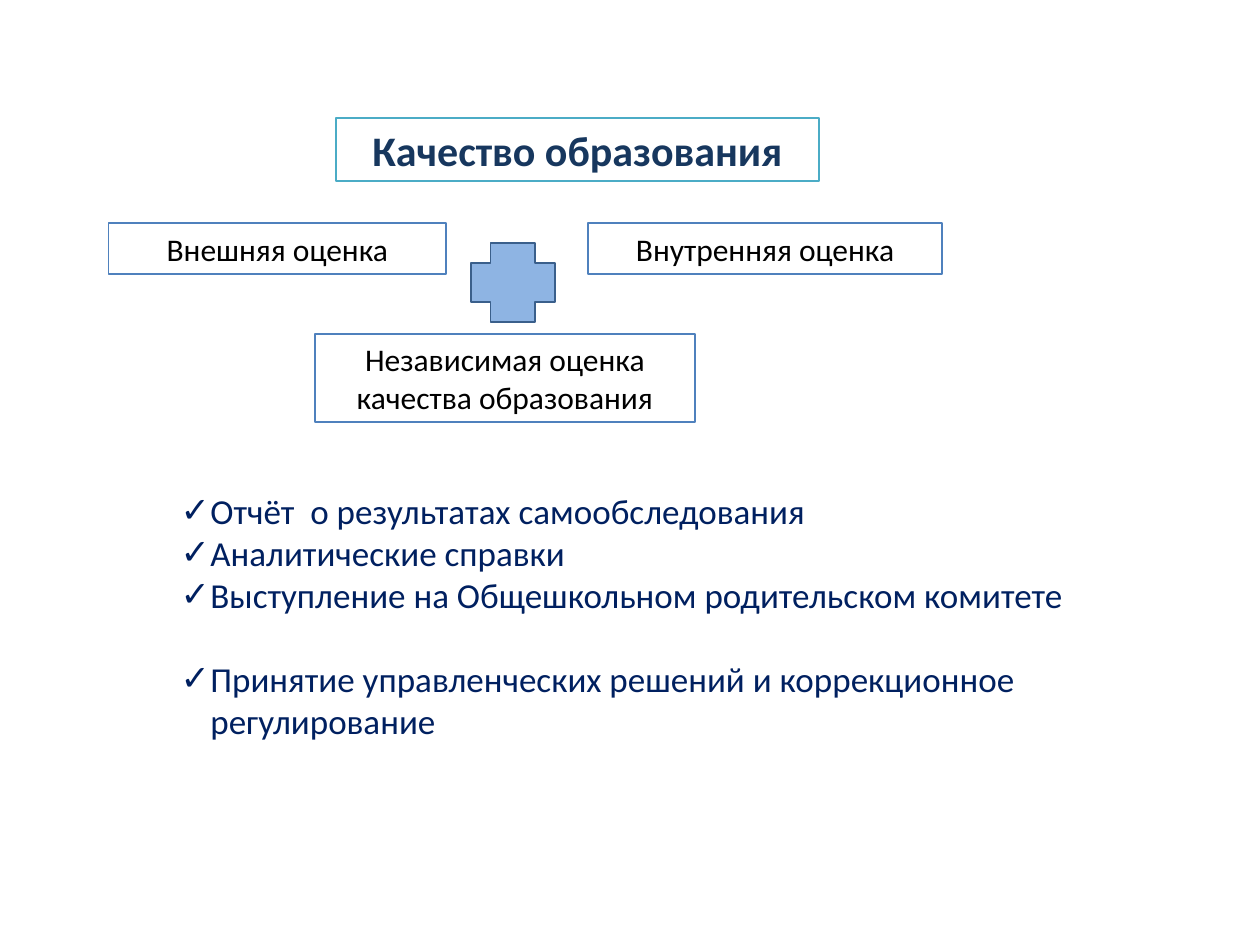
import pptx
import pptx.util
import pptx.dml.color
import pptx.enum.shapes
import pptx.enum.text
import pptx.oxml.ns
import lxml.etree

Pt = pptx.util.Pt
RGBColor = pptx.dml.color.RGBColor
SHAPES = pptx.enum.shapes.MSO_SHAPE
ANCHOR = pptx.enum.text.MSO_ANCHOR
ALIGN = pptx.enum.text.PP_ALIGN

WHITE = RGBColor(0xFF, 0xFF, 0xFF)
BLACK = RGBColor(0x00, 0x00, 0x00)
TITLE_BLUE = RGBColor(0x17, 0x37, 0x5E)
TEAL = RGBColor(0x4B, 0xAC, 0xC6)
BLUE = RGBColor(0x4F, 0x81, 0xBD)
PLUS_FILL = RGBColor(0x8E, 0xB4, 0xE3)
PLUS_LINE = RGBColor(0x3A, 0x5F, 0x8B)
NAVY = RGBColor(0x00, 0x20, 0x60)


def paint(shape, fill, line):
    shape.fill.solid()
    shape.fill.fore_color.rgb = fill
    shape.line.color.rgb = line
    shape.line.width = Pt(1)


def write(frame, para, text, size, color, bold=False):
    """Add one run to a paragraph and set up the frame around it."""
    frame.word_wrap = True
    frame.auto_size = pptx.enum.text.MSO_AUTO_SIZE.NONE
    span = para.add_run()
    span.text = text
    span.font.name = "Calibri"
    span.font.size = Pt(size)
    span.font.bold = bold
    span.font.color.rgb = color


deck = pptx.Presentation()
deck.slide_width, deck.slide_height = Pt(720), Pt(540)
page = deck.slides.add_slide(deck.slide_layouts[1])

# Title
title = page.shapes.title
title.left, title.top, title.width, title.height = Pt(192), Pt(67.5), Pt(276), Pt(36)
paint(title, WHITE, TEAL)
title.text_frame.vertical_anchor = ANCHOR.MIDDLE
write(title.text_frame, title.text_frame.paragraphs[0],
      "Качество образования", 24, TITLE_BLUE, bold=True)

# Kinds of assessment
assessments = [
    ("Внешняя оценка", 62, 127.5, 193, 29),
    ("Внутренняя оценка", 336, 127.5, 202.5, 29),
    ("Независимая оценка качества образования", 180, 191, 217, 50),
]
for text, left, top, width, height in assessments:
    box = page.shapes.add_shape(SHAPES.RECTANGLE, Pt(left), Pt(top), Pt(width), Pt(height))
    box.shadow.inherit = False
    paint(box, WHITE, BLUE)
    box.text_frame.vertical_anchor = ANCHOR.MIDDLE
    para = box.text_frame.paragraphs[0]
    para.alignment = ALIGN.CENTER
    write(box.text_frame, para, text, 18, BLACK)

plus = page.shapes.add_shape(SHAPES.CROSS, Pt(269), Pt(139), Pt(48), Pt(45))
plus.shadow.inherit = False
plus.adjustments[0] = 0.25
paint(plus, PLUS_FILL, PLUS_LINE)

# Checklist; the last item stands one line apart
results = [
    ("Отчёт  о результатах самообследования", 0),
    ("Аналитические справки", 0),
    ("Выступление на Общешкольном родительском комитете", 0),
    ("Принятие управленческих решений и коррекционное регулирование", 24),
]
body = page.placeholders[1]
body.left, body.top, body.width, body.height = Pt(96), Pt(276), Pt(546), Pt(151)
frame = body.text_frame
for index, (text, gap) in enumerate(results):
    para = frame.add_paragraph() if index else frame.paragraphs[0]
    para.space_before = Pt(gap)
    write(frame, para, text, 20, NAVY)
    properties = para._p.get_or_add_pPr()
    properties.set("marL", str(Pt(17)))
    properties.set("indent", str(-Pt(17)))
    bullet = lxml.etree.SubElement(properties, pptx.oxml.ns.qn("a:buChar"))
    bullet.set("char", "✓")

deck.save("out.pptx")
